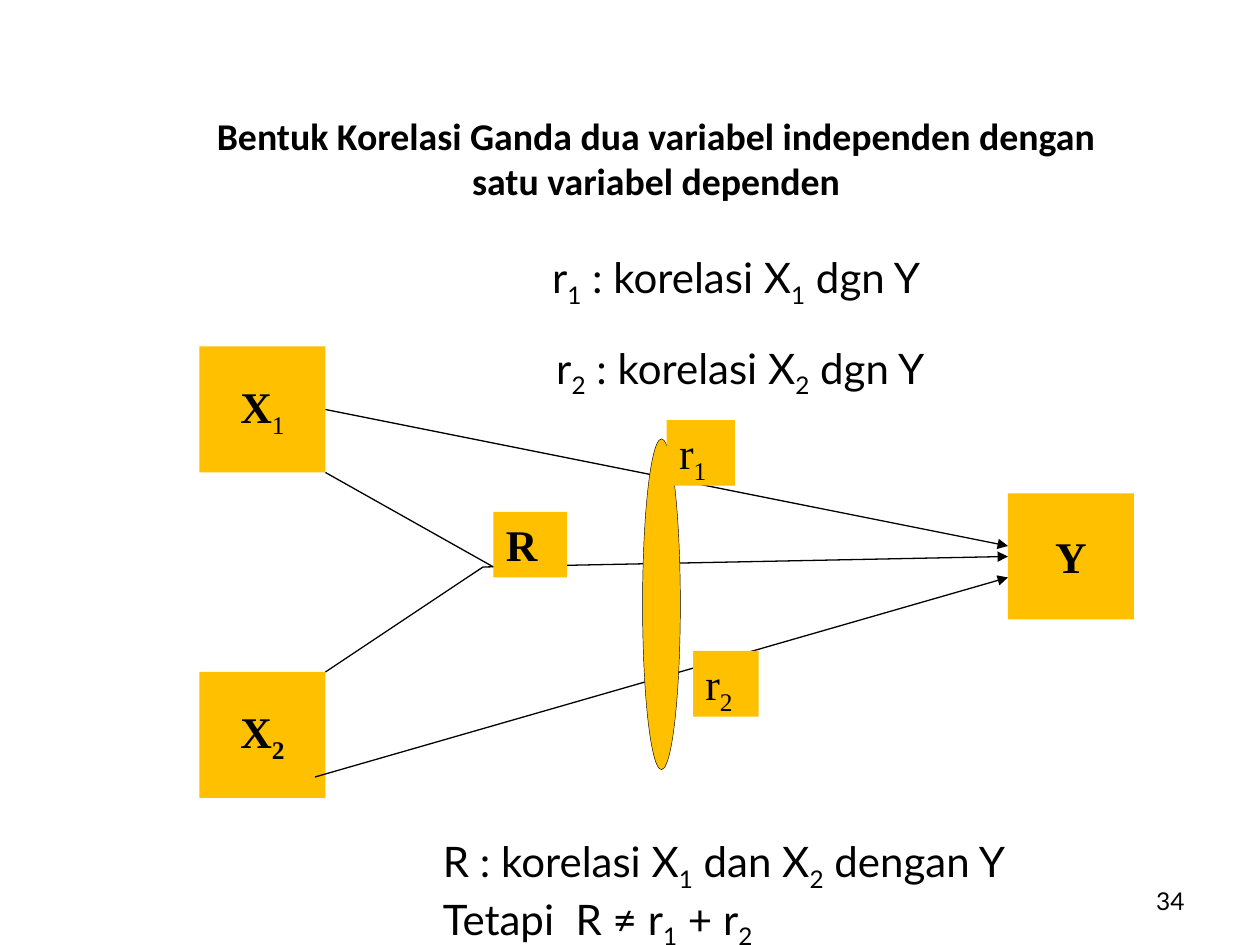
from dataclasses import dataclass, field
from typing import NamedTuple

from lxml.etree import SubElement
from pptx import Presentation
from pptx.dml.color import RGBColor
from pptx.enum.shapes import MSO_CONNECTOR, MSO_SHAPE
from pptx.enum.text import MSO_ANCHOR, MSO_AUTO_SIZE, PP_ALIGN
from pptx.oxml.ns import qn
from pptx.util import Inches, Pt

COLUMNS, ROWS = 120, 90  # twelve grid steps to the inch


@dataclass(frozen=True)
class Theme:
    ink: RGBColor = field(default_factory=lambda: RGBColor(0, 0, 0))
    amber: RGBColor = field(default_factory=lambda: RGBColor(0xFF, 0xC0, 0x00))
    hairline: float = 0.25
    thin: float = 0.75
    page: dict = field(default_factory=lambda: dict(name="Lato", size=Pt(14)))
    title: dict = field(default_factory=lambda: dict(
        name="Calibri", size=Pt(21.6), bold=True))
    note: dict = field(default_factory=lambda: dict(name="Lato", size=Pt(24)))
    plain: dict = field(default_factory=lambda: dict(
        name="Times New Roman", size=Pt(25), bold=False))
    strong: dict = field(default_factory=lambda: dict(
        name="Times New Roman", size=Pt(25), bold=True))


class Area(NamedTuple):
    column: float
    row: float
    columns: float
    rows: float


class Caption(NamedTuple):
    text: str  # "_" puts the next character in subscript
    area: Area
    style: dict
    align: PP_ALIGN = PP_ALIGN.LEFT
    anchor: MSO_ANCHOR = MSO_ANCHOR.TOP
    wrap: bool = False
    fit: MSO_AUTO_SIZE = MSO_AUTO_SIZE.SHAPE_TO_FIT_TEXT
    sub_bold: bool = True


class Path(NamedTuple):
    start: tuple[float, float]
    end: tuple[float, float]
    arrow: bool = False


THEME = Theme()
CENTRED = dict(align=PP_ALIGN.CENTER, anchor=MSO_ANCHOR.MIDDLE,
               fit=MSO_AUTO_SIZE.NONE)

# Heading and page number
HEADING = [
    Caption("34", Area(86, 83.4, 28, 4.8), THEME.page, PP_ALIGN.RIGHT,
            MSO_ANCHOR.MIDDLE, True, MSO_AUTO_SIZE.NONE),
    Caption("Bentuk Korelasi Ganda dua variabel independen dengan\v"
            "satu variabel dependen",
            Area(5, 10, 115, 10), THEME.title, wrap=True, **CENTRED),
]
# Explanations of the coefficients
NOTES = [
    Caption("r_1 : korelasi X_1 dgn Y", Area(51.4, 23.4, 39.1, 6), THEME.note),
    Caption("R : korelasi X_1 dan X_2 dengan Y\nTetapi  R ≠ r_1 + r_2",
            Area(41, 79, 58, 10.8), THEME.note),
    Caption("r_2 : korelasi X_2 dgn Y", Area(51.8, 32, 39.1, 6), THEME.note),
]
# Variables
VARIABLES = [
    Caption("Y", Area(96, 47, 12, 12), THEME.strong, **CENTRED),
    Caption("X_2", Area(19, 64, 12, 12), THEME.strong, **CENTRED),
    Caption("X_1", Area(19, 33, 12, 12), THEME.strong, sub_bold=False, **CENTRED),
]
# Relations between the variables
JOINT_RELATION = Path((46, 54), (96, 53), True)
RELATIONS = [
    Path((31, 39), (96, 52), True),
    Path((30, 74), (96, 55), True),
    Path((31, 45), (47, 54)),
    Path((31, 64), (46, 54)),
]
BUNDLE = Area(61.2, 41.8, 3.6, 31.5)
COEFFICIENTS = [
    Caption("R", Area(47, 48.75, 7, 6.25), THEME.strong, wrap=True),
    Caption("r_1", Area(63.5, 40, 6.5, 6.25), THEME.plain, wrap=True),
    Caption("r_2", Area(66, 62, 6.25, 6.25), THEME.plain, wrap=True),
]


def x(column: float) -> int:
    return round(Inches(10) * column / COLUMNS)


def y(row: float) -> int:
    return round(Inches(7.5) * row / ROWS)


def place(area: Area) -> tuple[int, int, int, int]:
    return x(area.column), y(area.row), x(area.columns), y(area.rows)


def add_run(paragraph, text: str, style: dict, subscript: bool = False) -> None:
    run = paragraph.add_run()
    run.text = text
    for name, value in style.items():
        setattr(run.font, name, value)
    run.font.color.rgb = THEME.ink
    if subscript:
        run.font._element.set("baseline", "-25000")


def write(shape, caption: Caption) -> None:
    frame = shape.text_frame
    frame.word_wrap = caption.wrap
    frame.auto_size = caption.fit
    frame.vertical_anchor = caption.anchor
    sub_style = caption.style if caption.sub_bold else THEME.plain
    for i, content in enumerate(caption.text.split("\n")):
        paragraph = frame.add_paragraph() if i else frame.paragraphs[0]
        paragraph.alignment = caption.align
        for j, line in enumerate(content.split("\v")):
            if j:
                paragraph.add_line_break()
            base, *pieces = line.split("_")
            add_run(paragraph, base, caption.style)
            for piece in pieces:
                add_run(paragraph, piece[0], sub_style, subscript=True)
                if piece[1:]:
                    add_run(paragraph, piece[1:], caption.style)


def draw_text(slide, caption: Caption) -> None:
    write(slide.shapes.add_textbox(*place(caption.area)), caption)


def draw_filled(slide, kind: MSO_SHAPE, area: Area):
    shape = slide.shapes.add_shape(kind, *place(area))
    shape.shadow.inherit = False
    shape.fill.solid()
    shape.fill.fore_color.rgb = THEME.amber
    shape.line.fill.background()
    return shape


def draw_box(slide, caption: Caption) -> None:
    write(draw_filled(slide, MSO_SHAPE.RECTANGLE, caption.area), caption)


def draw_path(slide, path: Path) -> None:
    (x1, y1), (x2, y2) = path.start, path.end
    line = slide.shapes.add_connector(
        MSO_CONNECTOR.STRAIGHT, x(x1), y(y1), x(x2), y(y2))
    line.line.color.rgb = THEME.ink
    line.line.width = Pt(THEME.thin)
    if path.arrow:
        SubElement(line.line._get_or_add_ln(), qn("a:tailEnd"), type="triangle")
    SubElement(line._element.spPr, qn("a:effectLst"))


def main() -> None:
    deck = Presentation()
    deck.slide_width, deck.slide_height = Inches(10), Inches(7.5)
    slide = deck.slides.add_slide(deck.slide_layouts[6])

    for caption in HEADING:
        draw_text(slide, caption)
    draw_path(slide, JOINT_RELATION)
    for caption in NOTES:
        draw_text(slide, caption)
    for variable in VARIABLES:
        draw_box(slide, variable)
    for relation in RELATIONS:
        draw_path(slide, relation)

    # Ellipse that bundles the three relations
    bundle = draw_filled(slide, MSO_SHAPE.OVAL, BUNDLE)
    bundle.line.color.rgb = THEME.ink
    bundle.line.width = Pt(THEME.hairline)
    for coefficient in COEFFICIENTS:
        draw_box(slide, coefficient)

    deck.save("out.pptx")


if __name__ == "__main__":
    main()
